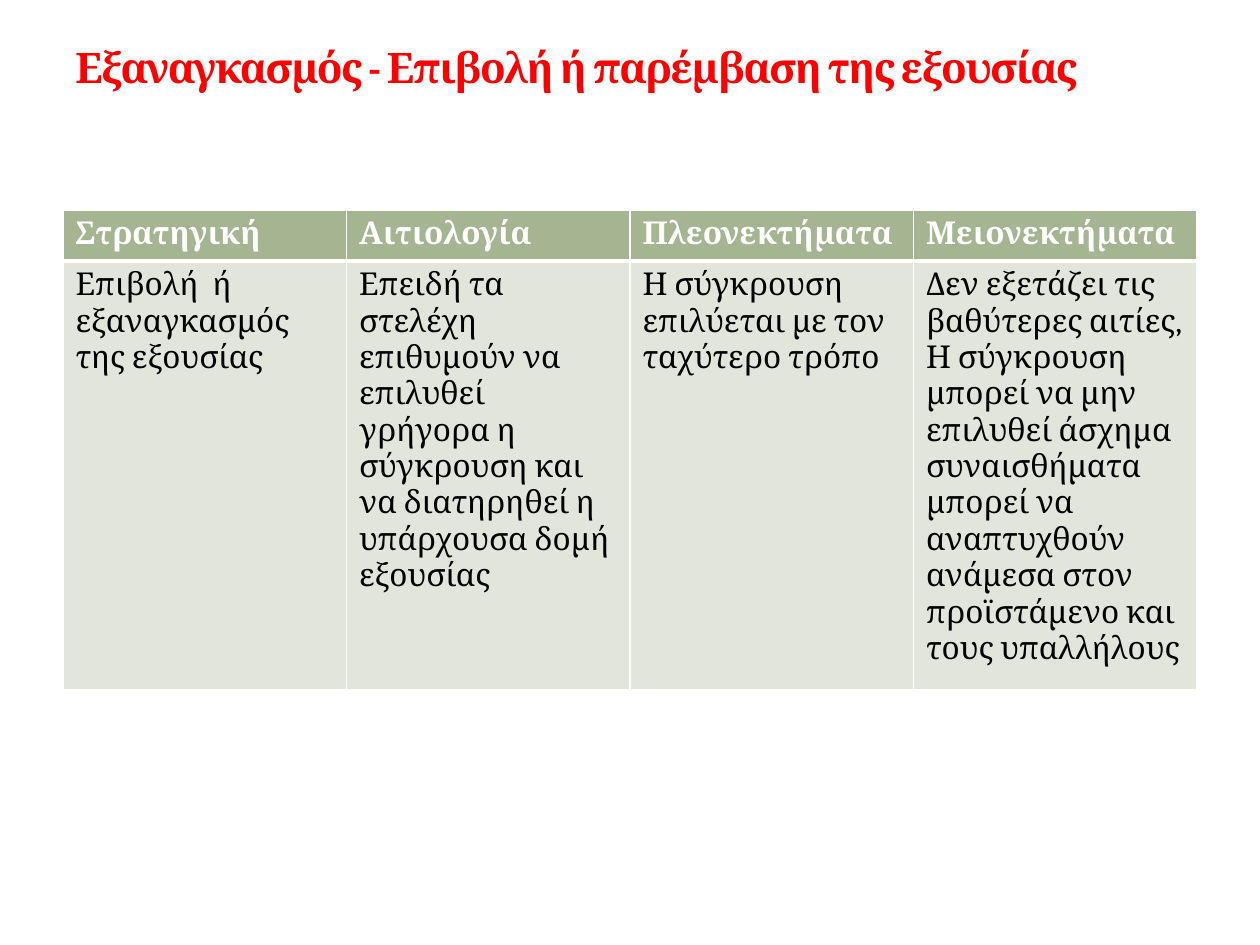
from dataclasses import dataclass

from lxml.etree import SubElement
from pptx import Presentation
from pptx.dml.color import RGBColor
from pptx.enum.text import MSO_ANCHOR
from pptx.oxml import parse_xml
from pptx.oxml.ns import nsdecls, qn
from pptx.util import Pt


@dataclass(frozen=True)
class Theme:
    font: str = "Cambria"
    title_size: float = 24
    table_size: float = 18
    title: str = "FF0000"
    title_edge: str = "E0DDB1"
    header_fill: str = "A5B592"
    header_text: str = "FFFFFF"
    body_fill: str = "E1E5DC"
    body_text: str = "000000"
    rule: str = "FFFFFF"
    thin: float = 1
    thick: float = 3


class SlideBuilder:
    def __init__(self, slide, theme):
        self.slide = slide
        self.theme = theme

    def add_run(self, paragraph, text, size, color, bold):
        run = paragraph.add_run()
        run.text = text
        run.font.name = self.theme.font
        run.font.size = Pt(size)
        run.font.bold = bold
        run.font.color.rgb = RGBColor.from_string(color)
        return run

    def add_title(self, text, left, top, width, height):
        theme = self.theme
        frame = self.slide.shapes.add_textbox(
            Pt(left), Pt(top), Pt(width), Pt(height)).text_frame
        frame.word_wrap = True
        frame.vertical_anchor = MSO_ANCHOR.BOTTOM
        run = self.add_run(frame.paragraphs[0], text, theme.title_size, theme.title, True)
        properties = run.font._element
        properties.set("spc", "-100")
        properties.insert(0, parse_xml(
            f'<a:ln {nsdecls("a")} w="{Pt(0.25)}"><a:solidFill>'
            f'<a:srgbClr val="{theme.title_edge}"><a:alpha val="25000"/></a:srgbClr>'
            f'</a:solidFill></a:ln>'))

    def add_borders(self, cell, widths):
        properties = cell._tc.get_or_add_tcPr()
        for side, width in widths.items():
            line = SubElement(properties, qn(f"a:ln{side}"), w=str(Pt(width)))
            fill = SubElement(line, qn("a:solidFill"))
            SubElement(fill, qn("a:srgbClr"), val=self.theme.rule)

    def add_table(self, rows, left, top, width, heights):
        theme = self.theme
        table = self.slide.shapes.add_table(
            len(rows), len(rows[0]), Pt(left), Pt(top), Pt(width), Pt(sum(heights))).table
        for row, height in zip(table.rows, heights):
            row.height = Pt(height)
        for row_index, texts in enumerate(rows):
            header = row_index == 0
            fill = theme.header_fill if header else theme.body_fill
            color = theme.header_text if header else theme.body_text
            borders = {
                "L": theme.thin,
                "R": theme.thin,
                "T": theme.thin if header else theme.thick,
                "B": theme.thick if header else theme.thin,
            }
            for column_index, text in enumerate(texts):
                cell = table.cell(row_index, column_index)
                self.add_borders(cell, borders)
                cell.fill.solid()
                cell.fill.fore_color.rgb = RGBColor.from_string(fill)
                self.add_run(cell.text_frame.paragraphs[0], text,
                             theme.table_size, color, header)


STRATEGY_ROWS = [
    ["Στρατηγική", "Αιτιολογία", "Πλεονεκτήματα", "Μειονεκτήματα"],
    [
        "Επιβολή  ή εξαναγκασμός της εξουσίας",
        "Επειδή τα στελέχη επιθυμούν να επιλυθεί γρήγορα η σύγκρουση "
        "και να διατηρηθεί η υπάρχουσα δομή εξουσίας",
        "Η σύγκρουση επιλύεται με τον ταχύτερο τρόπο",
        "Δεν εξετάζει τις βαθύτερες αιτίες, Η σύγκρουση μπορεί να μην "
        "επιλυθεί άσχημα συναισθήματα μπορεί να αναπτυχθούν ανάμεσα "
        "στον προϊστάμενο και τους υπαλλήλους",
    ],
]


def main():
    presentation = Presentation()
    presentation.slide_width = Pt(720)
    presentation.slide_height = Pt(540)
    slide = presentation.slides.add_slide(presentation.slide_layouts[6])
    builder = SlideBuilder(slide, Theme())
    builder.add_title("Εξαναγκασμός - Επιβολή ή παρέμβαση της εξουσίας", 36, 12, 648, 44)
    builder.add_table(STRATEGY_ROWS, 36, 120, 648, [29.2, 235])
    presentation.save("out.pptx")


if __name__ == "__main__":
    main()
